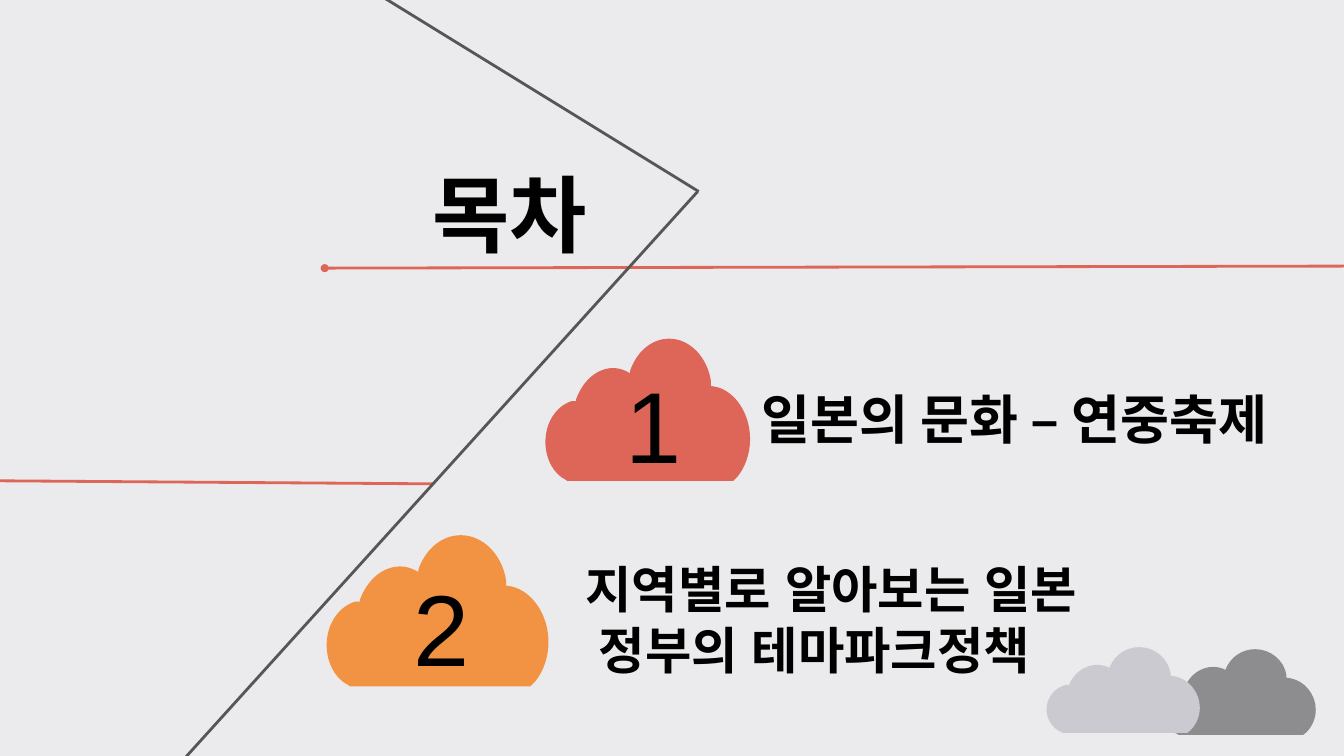
from lxml.etree import SubElement
from pptx import Presentation
from pptx.dml.color import RGBColor
from pptx.enum.shapes import MSO_CONNECTOR, MSO_SHAPE
from pptx.enum.text import MSO_ANCHOR, MSO_AUTO_SIZE, PP_ALIGN
from pptx.oxml.ns import qn
from pptx.util import Inches, Pt

BACKGROUND = RGBColor(0xEB, 0xEB, 0xED)
RED = RGBColor(0xDE, 0x66, 0x58)
ORANGE = RGBColor(0xF2, 0x93, 0x43)
CHARCOAL = RGBColor(0x56, 0x56, 0x58)
DARK_GRAY = RGBColor(0x8D, 0x8D, 0x8F)
LIGHT_GRAY = RGBColor(0xCA, 0xCA, 0xD0)
BLACK = RGBColor(0, 0, 0)

# Cloud outline in a 2.2 by 1.5 box: one point is a line, three are a curve
CLOUD_WIDTH, CLOUD_HEIGHT = 2.2, 1.5
CLOUD_START = (1.33, 0)
CLOUD_SEGMENTS = [
    [(1.55, 0), (1.74, 0.19), (1.78, 0.45)],
    [(1.78, 0.5)], [(1.84, 0.51)],
    [(2.04, 0.56), (2.2, 0.79), (2.2, 1.06)],
    [(2.2, 1.21), (2.15, 1.35), (2.07, 1.45)],
    [(2.02, 1.5)], [(0.23, 1.5)], [(0.22, 1.49)],
    [(0.09, 1.43), (0, 1.27), (0, 1.09)],
    [(0, 0.88), (0.12, 0.71), (0.28, 0.66)],
    [(0.33, 0.66)], [(0.33, 0.64)],
    [(0.4, 0.45), (0.55, 0.31), (0.73, 0.31)],
    [(0.79, 0.31), (0.85, 0.33), (0.9, 0.36)],
    [(0.91, 0.36)], [(0.91, 0.34)],
    [(0.98, 0.14), (1.14, 0), (1.33, 0)],
]


def draw_cloud(shapes, left, top, width, height, color):
    def place(point):
        return Inches(point[0] * width / CLOUD_WIDTH), Inches(point[1] * height / CLOUD_HEIGHT)

    builder = shapes.build_freeform(*place(CLOUD_START))
    builder.add_line_segments([place(segment[-1]) for segment in CLOUD_SEGMENTS], close=True)
    cloud = builder.convert_to_shape(Inches(left), Inches(top))
    # Turn the three-point segments into curves
    for edge, segment in zip(list(cloud._element.iter(qn("a:lnTo"))), CLOUD_SEGMENTS):
        if len(segment) == 3:
            edge.tag = qn("a:cubicBezTo")
            for index, control in enumerate(segment[:2]):
                x, y = place(control)
                handle = SubElement(edge, qn("a:pt"), x=str(x), y=str(y))
                edge.insert(index, handle)
    cloud.shadow.inherit = False
    cloud.fill.solid()
    cloud.fill.fore_color.rgb = color
    cloud.line.fill.background()


def write_text(box, lines, size, bold=True, name="Arial"):
    frame = box.text_frame
    settings = {"word_wrap": True, "auto_size": MSO_AUTO_SIZE.SHAPE_TO_FIT_TEXT,
                "vertical_anchor": MSO_ANCHOR.TOP}
    for key, value in settings.items():
        setattr(frame, key, value)
    for index, (text, indent) in enumerate(lines):
        para = frame.add_paragraph() if index else frame.paragraphs[0]
        para.alignment = PP_ALIGN.LEFT
        para._p.get_or_add_pPr().set("marL", str(Inches(indent)))
        span = para.add_run()
        span.text = text
        for key, value in {"size": Pt(size), "bold": bold, "name": name}.items():
            setattr(span.font, key, value)
        span.font.color.rgb = BLACK
        # Korean letters take the same font
        SubElement(span._r.get_or_add_rPr(), qn("a:ea"), typeface=name)


deck = Presentation()
deck.slide_width, deck.slide_height = Inches(13.33), Inches(7.5)
page = deck.slides.add_slide(deck.slide_layouts[5])
page.background.fill.solid()
page.background.fill.fore_color.rgb = BACKGROUND

# Title
title = page.shapes.title
for key, value in {"left": 3.96, "top": 1.56, "width": 2.44, "height": 1.11}.items():
    setattr(title, key, Inches(value))
write_text(title, [("목차", 0.23)], 60)

# Crossing lines
for x1, y1, x2, y2, color in [
    (3.22, 2.66, 13.33, 2.64, RED),
    (3.65, -0.12, 6.93, 1.9, CHARCOAL),
    (-0.03, 4.77, 4.3, 4.8, RED),
    (1.78, 7.58, 6.92, 1.9, CHARCOAL),
]:
    line = page.shapes.add_connector(MSO_CONNECTOR.STRAIGHT, *map(Inches, (x1, y1, x2, y2)))
    line.line.color.rgb = color
    line.line.width = Pt(2)
    SubElement(line._element.spPr, qn("a:effectLst"))

# Dot at the start of the title line
dot = page.shapes.add_shape(MSO_SHAPE.OVAL, *map(Inches, (3.18, 2.62, 0.08, 0.08)))
dot.shadow.inherit = False
dot.fill.solid()
dot.fill.fore_color.rgb = RED
dot.line.fill.background()

# Numbered clouds
for number, cloud_box, color, number_box in [
    ("1", (5.41, 3.36, 2.03, 1.41), RED, (6.11, 3.55, 0.92, 1.31)),
    ("2", (3.24, 5.31, 2.2, 1.5), ORANGE, (3.75, 5.56, 1.2, 1.31)),
]:
    badge = page.shapes.add_group_shape()
    draw_cloud(badge.shapes, *cloud_box, color)
    indent = 0.25 if number == "2" else 0
    write_text(badge.shapes.add_textbox(*map(Inches, number_box)), [(number, indent)], 72, bold=False)

# Corner clouds
draw_cloud(page.shapes, 11.53, 6.44, 1.52, 0.85, DARK_GRAY)
draw_cloud(page.shapes, 10.38, 6.42, 1.52, 0.85, LIGHT_GRAY)

# Topics
for bounds, lines, size, name in [
    ((7.45, 3.78, 5.88, 0.74), [("일본의 문화 – 연중축제", 0)], 38, "Noto Sans CJK KR"),
    ((5.15, 5.49, 8.36, 1.31),
     [("지역별로 알아보는 일본", 0.56), ("정부의 테마파크정책", 0.69)], 36, "Arial"),
]:
    write_text(page.shapes.add_textbox(*map(Inches, bounds)), lines, size, name=name)

deck.save("out.pptx")
